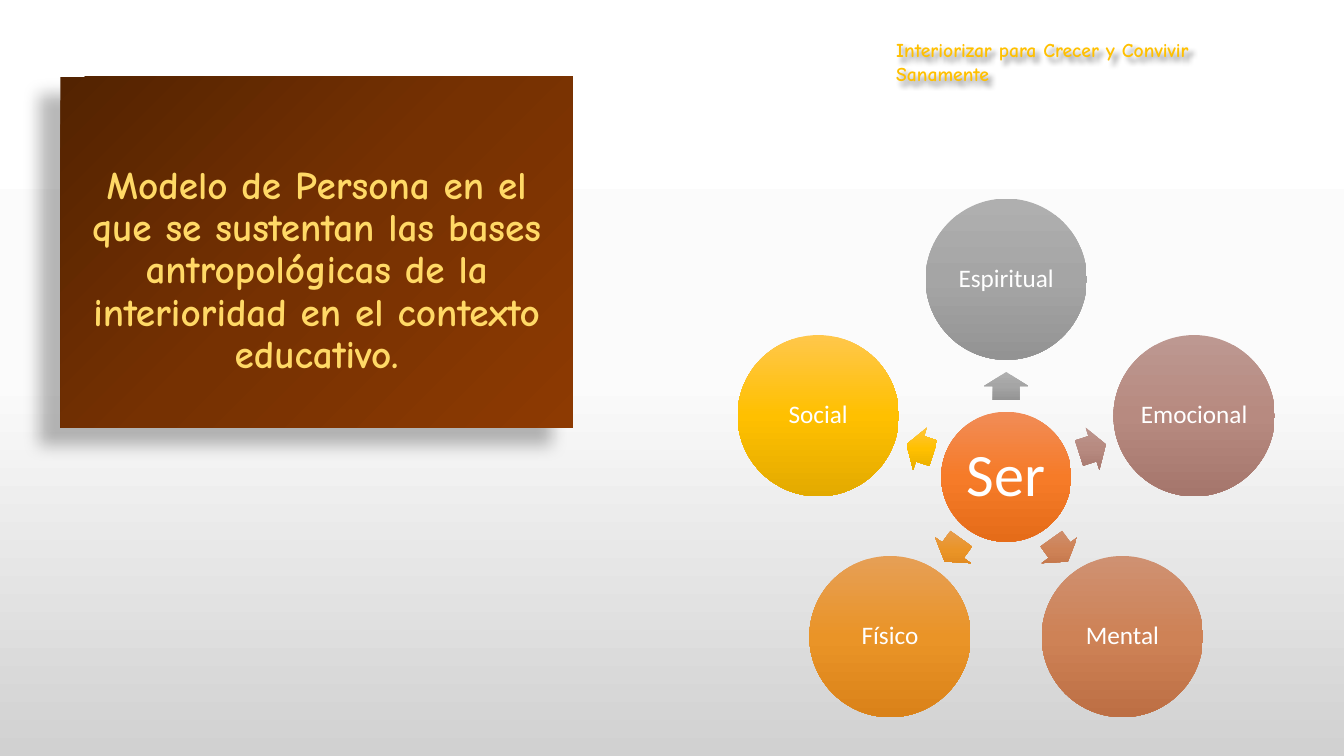
from copy import deepcopy
from math import cos, radians, sin

from lxml.etree import SubElement
from pptx import Presentation
from pptx.dml.color import RGBColor as RGB
from pptx.enum.shapes import MSO_SHAPE as Kind
from pptx.enum.text import MSO_ANCHOR as Anchor, MSO_AUTO_SIZE as Fit, PP_ALIGN as Align
from pptx.oxml.ns import qn
from pptx.util import Inches, Pt

WHITE = RGB(0xFF, 0xFF, 0xFF)
GOLD = RGB(0xFF, 0xC0, 0x00)
CREAM = RGB(0xFF, 0xD9, 0x66)
PAPER = (WHITE, RGB(0xFB, 0xFB, 0xFB), RGB(0xD1, 0xD1, 0xD1))
BROWN = (RGB(0x53, 0x23, 0x01), RGB(0x76, 0x31, 0x02), RGB(0x8D, 0x3A, 0x02))
CORE = (RGB(0xF1, 0x8C, 0x57), RGB(0xF6, 0x7B, 0x28), RGB(0xE5, 0x6C, 0x19))
GRAY = (RGB(0xAF, 0xAF, 0xAF), RGB(0xA5, 0xA5, 0xA5), RGB(0x93, 0x93, 0x93))
ROSE = (RGB(0xBD, 0x98, 0x91), RGB(0xB7, 0x8A, 0x80), RGB(0xA5, 0x76, 0x6C))
CLAY = (RGB(0xCF, 0x91, 0x72), RGB(0xCE, 0x82, 0x56), RGB(0xBD, 0x6F, 0x44))
AMBER = (RGB(0xE6, 0x9F, 0x56), RGB(0xEA, 0x94, 0x27), RGB(0xDA, 0x82, 0x19))
SUN = (RGB(0xFF, 0xC7, 0x4B), GOLD, RGB(0xE3, 0xAA, 0x00))

PARTS = [("Espiritual", GRAY), ("Emocional", ROSE), ("Mental", CLAY),
         ("Físico", AMBER), ("Social", SUN)]
MID_X, MID_Y = 9.98, 4.73
RING, GAP = 1.96, 0.9


class Deck:
    """Holds the style and the current slide, and draws each kind of element."""

    hand = "Comic Neue"
    plain = "Calibri"

    def __init__(self):
        self.file = Presentation()
        self.file.slide_width = Inches(13.33)
        self.file.slide_height = Inches(7.5)
        self.slide = self.file.slides.add_slide(self.file.slide_layouts[5])
        self.blend(self.slide.background.fill, PAPER)

    def blend(self, fill, tones, angle=90):
        fill.gradient()
        fill.gradient_angle = 360 - angle
        grad = fill._xPr.find(qn("a:gradFill"))
        grad.set("rotWithShape", "0")
        stops = grad.find(qn("a:gsLst"))
        stops.append(deepcopy(stops[0]))
        for stop, tone, place in zip(fill.gradient_stops, tones, (0, 0.5, 1)):
            stop.color.rgb = tone
            stop.position = place

    def shade(self, shape, blur, dist, angle, alpha):
        shape.shadow.inherit = False
        effects = shape._element.spPr.find(qn("a:effectLst"))
        outer = SubElement(effects, qn("a:outerShdw"), blurRad=str(Pt(blur)),
                           dist=str(Pt(dist)), dir=str(angle * 60000),
                           algn="ctr", rotWithShape="0")
        color = SubElement(outer, qn("a:srgbClr"), val="000000")
        SubElement(color, qn("a:alpha"), val=str(alpha * 1000))

    def label(self, shape, text, font, size, color, bold=False, inset=0.1,
              align=Align.CENTER, space=0.9, **frame):
        body = shape.text_frame
        body.text = text
        sides = ("margin_left", "margin_right", "margin_top", "margin_bottom")
        base = dict.fromkeys(sides, Inches(inset))
        para = body.paragraphs[0]
        face = para.runs[0].font
        face.color.rgb = color
        for item, look in ((body, {**base, **frame}),
                           (para, {"alignment": align, "line_spacing": space}),
                           (face, {"name": font, "size": Pt(size), "bold": bold})):
            for key, value in look.items():
                setattr(item, key, value)

    def shape(self, kind, x, y, wide, high, tones):
        item = self.slide.shapes.add_shape(
            kind, Inches(x - wide / 2), Inches(y - high / 2), Inches(wide), Inches(high))
        self.blend(item.fill, tones)
        item.line.fill.background()
        item.shadow.inherit = False
        return item

    def disc(self, x, y, size, tones, text, points, inset):
        item = self.shape(Kind.OVAL, x, y, size, size, tones)
        self.label(item, text, self.plain, points, WHITE, inset=inset,
                   vertical_anchor=Anchor.MIDDLE, word_wrap=False)

    def arrow(self, x, y, turn, tones):
        item = self.shape(Kind.RIGHT_ARROW, x, y, 0.28, 0.44, tones)
        item.adjustments[0] = 0.6
        item.adjustments[1] = 0.5
        item.rotation = turn % 360

    def title(self, text):
        item = self.slide.shapes.title
        box = {"left": 0.6, "top": 0.76, "width": 5.08, "height": 3.48}
        for key, value in box.items():
            setattr(item, key, Inches(value))
        self.blend(item.fill, BROWN, 45)
        self.shade(item, 11.8, 19.7, 141, 28)
        self.label(item, text, self.hand, 28, CREAM, bold=True, auto_size=Fit.NONE,
                   vertical_anchor=Anchor.TOP, word_wrap=True, margin_top=Inches(0.88))

    def motto(self, text):
        item = self.slide.shapes.add_textbox(
            Inches(8.79), Inches(0.33), Inches(4.09), Inches(0.34))
        self.shade(item, 4, 4, 45, 45)
        self.label(item, text, self.hand, 14, GOLD, bold=True, align=Align.LEFT,
                   space=1.0, word_wrap=False, margin_top=Inches(0.05),
                   margin_bottom=Inches(0.05))

    def wheel(self):
        self.disc(MID_X, MID_Y, 1.29, CORE, "Ser", 43, 0.06)
        for step, (name, tones) in enumerate(PARTS):
            turn = 270 + step * 360 / len(PARTS)
            dx, dy = cos(radians(turn)), sin(radians(turn))
            self.arrow(MID_X + GAP * dx, MID_Y + GAP * dy, turn, tones)
            self.disc(MID_X + RING * dx, MID_Y + RING * dy, 1.6, tones, name, 18, 0.03)


def main():
    deck = Deck()
    deck.title("Modelo de Persona en el que se sustentan las bases antropológicas "
               "de la interioridad en el contexto educativo.")
    deck.motto("Interiorizar para Crecer y Convivir Sanamente")
    deck.wheel()
    deck.file.save("out.pptx")


if __name__ == "__main__":
    main()
